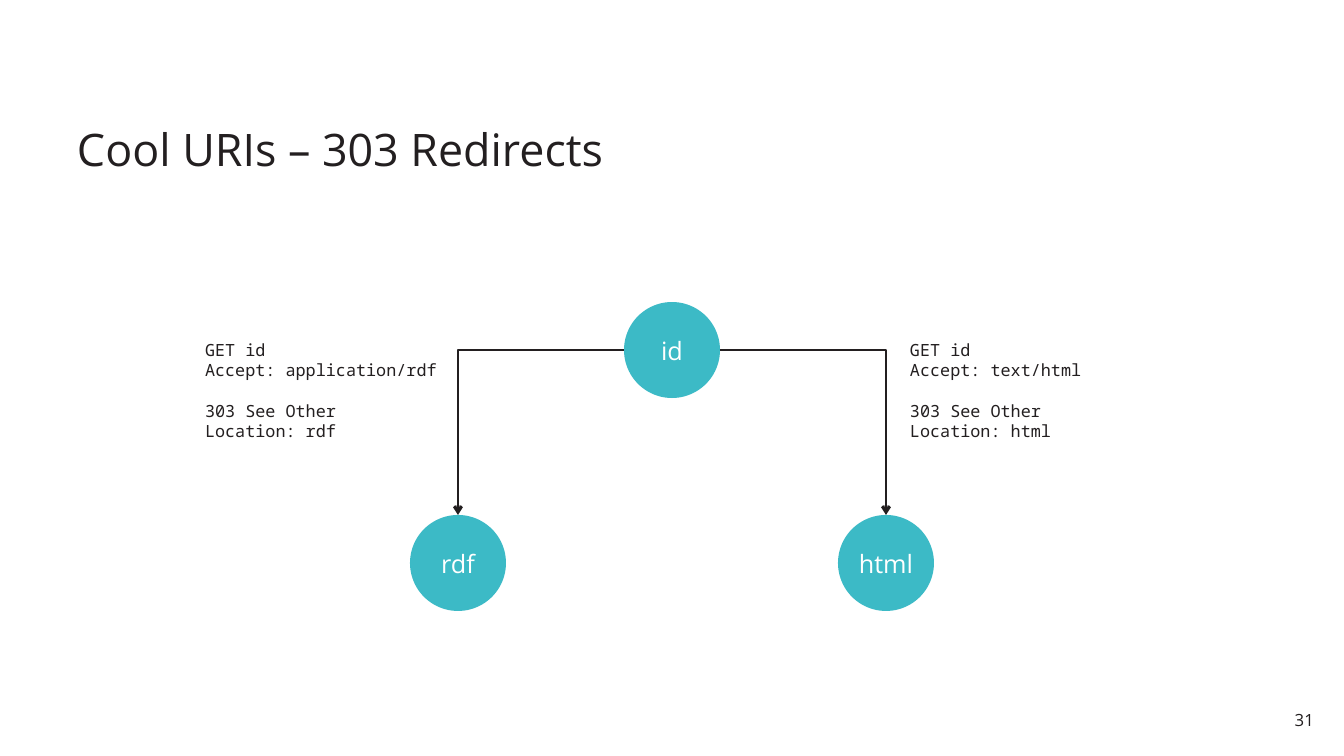
import pptx
import pptx.dml.color
import pptx.enum.shapes
import pptx.enum.text
import pptx.oxml
import pptx.oxml.ns
import pptx.util
from lxml import etree

PX = 914400 / 100.8
ALIGN = pptx.enum.text.PP_ALIGN
ANCHOR = pptx.enum.text.MSO_ANCHOR
SANS, MONO = "Open Sans", "Noto Sans Mono"
INK, TEAL, WHITE = "231F20", "3CBAC6", "FFFFFF"


def px(n):
    return pptx.util.Emu(round(n * PX))


def color(value):
    return pptx.dml.color.RGBColor.from_string(value)


def write(tf, text, size=12, font=SANS, fill=INK, align=ALIGN.LEFT,
          anchor=ANCHOR.TOP, wrap=False, spacing=None, gap=0, inset=(10, 5)):
    tf.word_wrap = wrap
    tf.vertical_anchor = anchor
    tf.margin_left = tf.margin_right = px(inset[0])
    tf.margin_top = tf.margin_bottom = px(inset[1])
    for i, part in enumerate(text.split("\n\n")):
        p = tf.add_paragraph() if i else tf.paragraphs[0]
        p.text = part.replace("\n", "\v")
        p.alignment = align
        if spacing:
            p.line_spacing = spacing
        if i:
            p.space_before = pptx.util.Pt(gap)
        for r in p.runs:
            r.font.size = pptx.util.Pt(size)
            r.font.name = font
            r.font.color.rgb = color(fill)


class Slide:
    def __init__(self, prs):
        self.s = prs.slides.add_slide(prs.slide_layouts[6])
        self.line_width = pptx.util.Pt(2)
        self.radius = 48

    def text(self, x, y, w, h, text, **style):
        sp = self.s.shapes.add_textbox(px(x), px(y), px(w), px(h))
        write(sp.text_frame, text, **style)

    def node(self, cx, cy, label):
        r = self.radius
        sp = self.s.shapes.add_shape(
            pptx.enum.shapes.MSO_SHAPE.OVAL, px(cx - r), px(cy - r), px(2 * r), px(2 * r))
        sp.shadow.inherit = False
        sp.fill.solid()
        sp.fill.fore_color.rgb = color(TEAL)
        sp.line.fill.background()
        write(sp.text_frame, label, size=18, fill=WHITE,
              align=ALIGN.CENTER, anchor=ANCHOR.MIDDLE)
        return sp

    def redirect(self, source, target, side):
        x = source.left if side < 0 else source.left + source.width
        c = self.s.shapes.add_connector(
            pptx.enum.shapes.MSO_CONNECTOR.ELBOW, x, source.top + source.height // 2,
            target.left + target.width // 2, target.top)
        c.line.color.rgb = color(INK)
        c.line.width = self.line_width
        qn = pptx.oxml.ns.qn
        props = c._element.spPr
        props.find(qn("a:prstGeom")).set("prst", "bentConnector2")
        etree.SubElement(props.find(qn("a:ln")), qn("a:tailEnd"), type="arrow")
        etree.SubElement(props, qn("a:effectLst"))
        links = c._element.nvCxnSpPr.cNvCxnSpPr
        for tag, sp, site in (("a:stCxn", source, 2 if side < 0 else 6),
                              ("a:endCxn", target, 0)):
            etree.SubElement(links, qn(tag), id=str(sp.shape_id), idx=str(site))


def main():
    prs = pptx.Presentation()
    prs.slide_width, prs.slide_height = px(1344), px(756)
    s = Slide(prs)
    s.text(1275, 704, 47, 31, "31", align=ALIGN.RIGHT, inset=(8, 6))
    s.text(69, 77, 1207, 103, "Cool URIs – 303 Redirects", size=32,
           anchor=ANCHOR.BOTTOM, wrap=True, spacing=0.9, inset=(8, 4))

    center, top, bottom, reach = 672, 350, 563, 214
    root = s.node(center, top, "id")
    branches = [
        (-1, "rdf", "application/rdf", 195, 256),
        (1, "html", "text/html", 900, 195),
    ]
    for side, label, media, x, w in branches:
        leaf = s.node(center + side * reach, bottom, label)
        s.redirect(root, leaf, side)
        s.text(x, 335, w, 112,
               f"GET id\nAccept: {media}\n\n303 See Other\nLocation: {label}",
               font=MONO, gap=14.5)
    prs.save("out.pptx")


if __name__ == "__main__":
    main()
